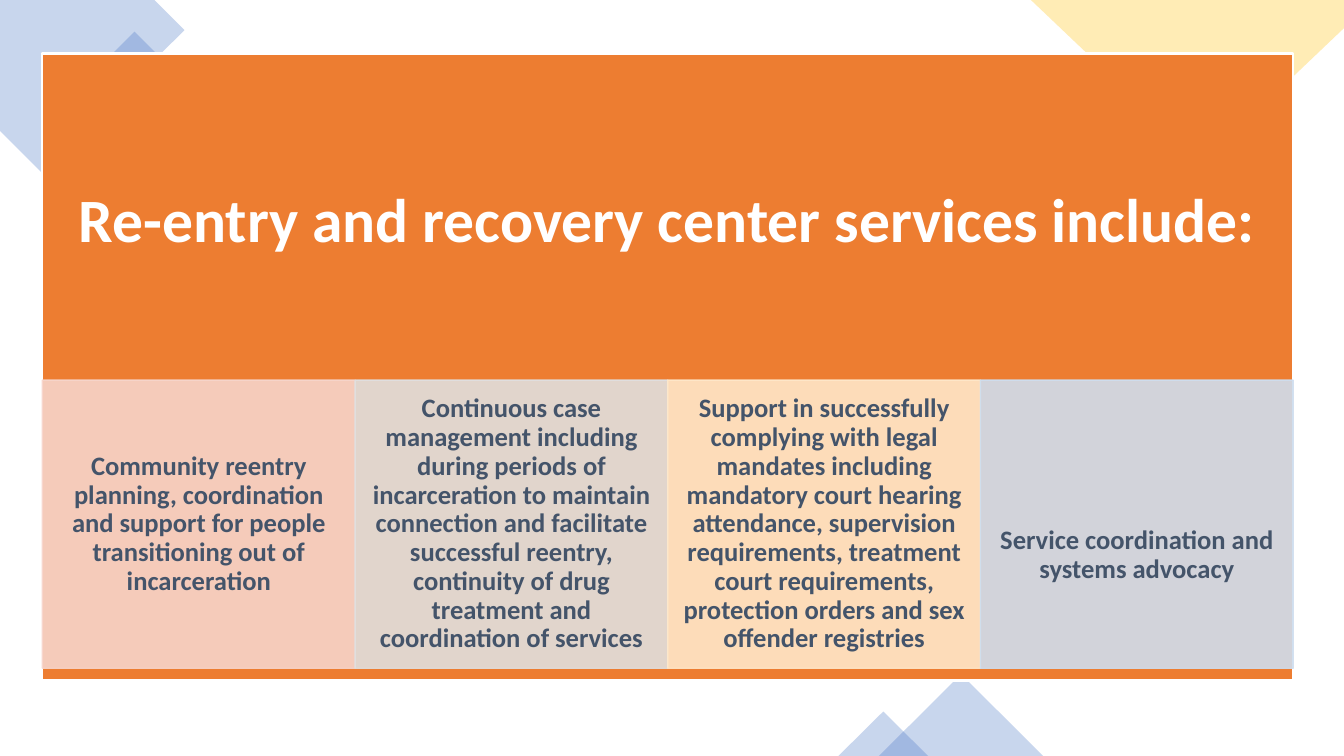
from dataclasses import dataclass

from lxml import etree
from pptx import Presentation
from pptx import util as u
from pptx.dml.color import RGBColor
from pptx.enum import shapes, text
from pptx.oxml.ns import qn


@dataclass(frozen=True)
class Theme:
    font: str = "Calibri"
    heading_size: int = 44
    body_size: int = 19
    white: str = "FFFFFF"
    orange: str = "ED7D31"
    blue: str = "4472C4"
    gold: str = "FFC000"
    ink: str = "44546A"
    cards: tuple = ("F7D5CB", "E0E0E0", "FFE8CA", "CFDEEF")
    decor_opacity: int = 29
    card_opacity: int = 89


SERVICES = (
    "Community reentry planning, coordination and support for people "
    "transitioning out of incarceration",
    "Continuous case management including during periods of incarceration "
    "to maintain connection and facilitate successful reentry, continuity "
    "of drug treatment and coordination of services",
    "Support in successfully complying with legal mandates including "
    "mandatory court hearing attendance, supervision requirements, "
    "treatment court requirements, protection orders and sex offender registries",
    "Service coordination and systems advocacy",
)


def paint(fill, color, opacity=100):
    fill.solid()
    fill.fore_color.rgb = RGBColor.from_string(color)
    if opacity < 100:
        for node in fill.fore_color._xFill.iter(qn("a:srgbClr")):
            etree.SubElement(node, qn("a:alpha"), val=str(opacity * 1000))


def write(box, words, *, font, size, color, margins):
    frame = box.text_frame
    frame.word_wrap = True
    frame.auto_size = text.MSO_AUTO_SIZE.NONE
    frame.vertical_anchor = text.MSO_ANCHOR.MIDDLE
    left, top, right, bottom = (u.Cm(margin) for margin in margins)
    frame.margin_left, frame.margin_right = left, right
    frame.margin_top, frame.margin_bottom = top, bottom
    para = frame.paragraphs[0]
    para.alignment = text.PP_ALIGN.CENTER
    para.line_spacing = 0.9
    span = para.add_run()
    span.text = words
    span.font.name = font
    span.font.size = u.Pt(size)
    span.font.bold = True
    span.font.color.rgb = RGBColor.from_string(color)


class SlideBuilder:
    def __init__(self, page, theme):
        self.page = page
        self.theme = theme

    def style(self, shape, color, opacity=100, line=None, line_width=1):
        shape.shadow.inherit = False
        paint(shape.fill, color, opacity)
        if line:
            shape.line.width = u.Pt(line_width)
            paint(shape.line.fill, line, opacity)
        else:
            shape.line.fill.background()
        return shape

    def block(self, kind, left, top, width, height, color, **look):
        box = self.page.shapes.add_shape(
            kind, u.Cm(left), u.Cm(top), u.Cm(width), u.Cm(height))
        return self.style(box, color, **look)

    def outline(self, points, color, **look):
        start, *rest = [(u.Cm(x), u.Cm(y)) for x, y in points]
        path_builder = self.page.shapes.build_freeform(*start)
        path_builder.add_line_segments(rest, close=True)
        return self.style(path_builder.convert_to_shape(), color, **look)

    def heading(self, words, left, top, width, height, behind):
        title = self.page.shapes.title
        title.left, title.top = u.Cm(left), u.Cm(top)
        title.width, title.height = u.Cm(width), u.Cm(height)
        behind.element.addnext(title.element)
        write(title, words, font=self.theme.font, size=self.theme.heading_size,
              color=self.theme.white, margins=(0.86,) * 4)

    def card(self, words, left, top, width, height, color, drop=0):
        box = self.block(shapes.MSO_SHAPE.RECTANGLE, left, top, width, height,
                         color, opacity=self.theme.card_opacity, line=color)
        write(box, words, font=self.theme.font, size=self.theme.body_size,
              color=self.theme.ink, margins=(0.38, 0.08 + 2 * drop, 0.38, 0.08))


def main():
    theme = Theme()
    deck = Presentation()
    deck.slide_width, deck.slide_height = u.Cm(33.87), u.Cm(19.05)
    page = deck.slides.add_slide(deck.slide_layouts[5])
    builder = SlideBuilder(page, theme)
    rectangle = shapes.MSO_SHAPE.RECTANGLE
    triangle = shapes.MSO_SHAPE.ISOSCELES_TRIANGLE
    faint = {"opacity": theme.decor_opacity}

    builder.outline([(3.89, 0), (0, 0), (0, 3.3), (1.04, 4.34), (4.65, 0.76)],
                    theme.blue, **faint)
    diamond = builder.block(rectangle, 2.49, 1.17, 1.8, 1.8, theme.blue, **faint)
    diamond.rotation = 315
    builder.outline([(33.87, 0), (25.98, 0), (30.3, 4.11), (33.87, 0.71)],
                    theme.gold, **faint)
    builder.block(triangle, 22.15, 16.99, 4.14, 2.06, theme.blue, **faint)
    builder.block(triangle, 21.13, 17.93, 2.26, 1.12, theme.blue, **faint)

    left, top, width = 1.07, 1.35, 31.52
    panel = builder.block(rectangle, left, top, width, 15.8, theme.orange,
                          line=theme.white, line_width=1.5)
    builder.heading("Re-entry and recovery center services include:",
                    left, top, width, 8.53, behind=panel)

    card_width = width / len(SERVICES)
    drops = (0, 0, 0, 0.79)
    for index, (words, color, drop) in enumerate(zip(SERVICES, theme.cards, drops)):
        builder.card(words, left + index * card_width, 9.58, card_width, 7.26,
                     color, drop)

    deck.save("out.pptx")


if __name__ == "__main__":
    main()
